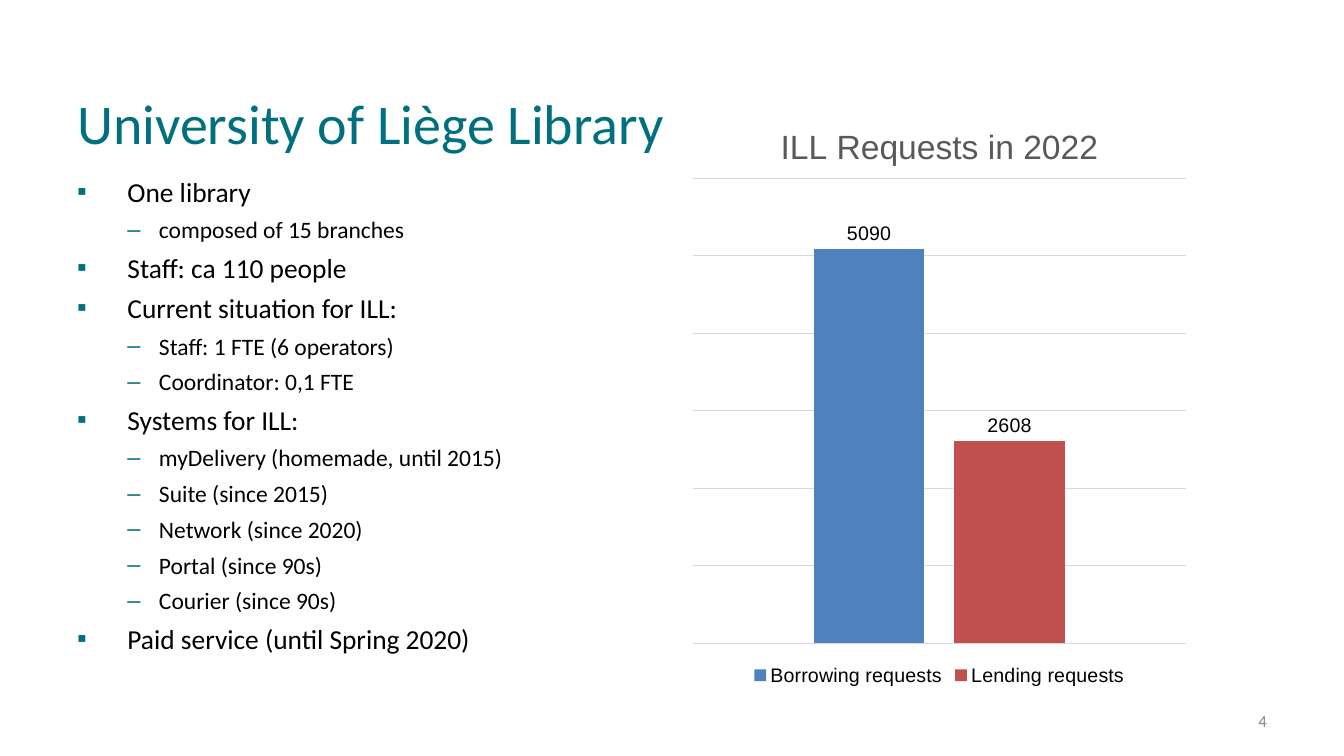
from lxml import etree
from pptx import Presentation
from pptx.chart.data import CategoryChartData
from pptx.dml.color import RGBColor
from pptx.enum.chart import XL_CHART_TYPE, XL_LABEL_POSITION, XL_LEGEND_POSITION
from pptx.enum.text import MSO_ANCHOR, PP_ALIGN
from pptx.oxml.ns import qn
from pptx.util import Pt

COLUMNS = XL_CHART_TYPE.COLUMN_CLUSTERED
OUTSIDE_END = XL_LABEL_POSITION.OUTSIDE_END
BOTTOM = XL_LEGEND_POSITION.BOTTOM
MIDDLE = MSO_ANCHOR.MIDDLE
LEFT, RIGHT = PP_ALIGN.LEFT, PP_ALIGN.RIGHT

TEAL = "00707F"
BLACK = "000000"
TITLE_ONLY = 5

# Per level: bullet, left margin, hanging indent, space before, text size
LEVELS = [("▪", 36, 36, 9.9, 19.6), ("–", 58.5, 22.5, 9.4, 16.8)]
POINTS = [
    (0, "One library"),
    (1, "composed of 15 branches"),
    (0, "Staff: ca 110 people"),
    (0, "Current situation for ILL:"),
    (1, "Staff: 1 FTE (6 operators)"),
    (1, "Coordinator: 0,1 FTE"),
    (0, "Systems for ILL:"),
    (1, "myDelivery (homemade, until 2015)"),
    (1, "Suite (since 2015)"),
    (1, "Network (since 2020)"),
    (1, "Portal (since 90s)"),
    (1, "Courier (since 90s)"),
    (0, "Paid service (until Spring 2020)"),
]
REQUESTS = [("Borrowing requests", 5090, "4F81BD"), ("Lending requests", 2608, "C0504D")]
# Inner plot area as fractions of the chart
PLOT_LAYOUT = {"x": 0.02, "y": 0.13, "w": 0.96, "h": 0.79}


def rgb(color):
    return RGBColor.from_string(color)


def set_font(font, name, size, color):
    font.name = name
    font.size = Pt(size)
    font.color.rgb = rgb(color)


deck = Presentation()
deck.slide_width, deck.slide_height = Pt(960), Pt(540)
page = deck.slides.add_slide(deck.slide_layouts[TITLE_ONLY])

# Title
title = page.shapes.title
title.left, title.top, title.width, title.height = Pt(48), Pt(62.6), Pt(864), Pt(49)
title.text_frame.text = "University of Liège Library"
title.text_frame.vertical_anchor = MIDDLE
title_para = title.text_frame.paragraphs[0]
title_para.alignment = LEFT
set_font(title_para.font, "Calibri", 40, TEAL)

# Bulleted text
body = page.shapes.add_textbox(Pt(48), Pt(126), Pt(864), Pt(368)).text_frame
body.word_wrap = True
for index, (level, text) in enumerate(POINTS):
    bullet, margin, hanging, space, size = LEVELS[level]
    para = body.add_paragraph() if index else body.paragraphs[0]
    para.text = text
    para.level = level
    para.line_spacing = 0.8
    para.space_before = Pt(space if index else 0)
    properties = para._p.get_or_add_pPr()
    properties.set("marL", str(Pt(margin)))
    properties.set("indent", str(-Pt(hanging)))
    bullet_color = etree.SubElement(properties, qn("a:buClr"))
    etree.SubElement(bullet_color, qn("a:srgbClr"), val=TEAL)
    etree.SubElement(properties, qn("a:buFont"), typeface="Arial")
    etree.SubElement(properties, qn("a:buChar"), char=bullet)
    set_font(para.font, "Calibri", size, BLACK)

# Page number
number = page.shapes.add_textbox(Pt(688), Pt(500.5), Pt(224), Pt(28.8)).text_frame
number.word_wrap = True
number.vertical_anchor = MIDDLE
number.text = "4"
number_para = number.paragraphs[0]
number_para.alignment = RIGHT
set_font(number_para.font, "Calibri", 12, "888888")

# Chart of requests
data = CategoryChartData()
data.categories = ["1"]
for name, count, color in REQUESTS:
    data.add_series(name, [count])
chart = page.shapes.add_chart(COLUMNS, Pt(487.5), Pt(72.7), Pt(367), Pt(420.5), data).chart
set_font(chart.font, "Arial", 10, BLACK)

chart.has_title = True
chart.chart_title.include_in_layout = False
chart.chart_title.text_frame.text = "ILL Requests in 2022"
chart_title_font = chart.chart_title.text_frame.paragraphs[0].font
set_font(chart_title_font, "Arial", 24, "595959")
chart_title_font.bold = False

chart.has_legend = True
chart.legend.position = BOTTOM
chart.legend.include_in_layout = False
set_font(chart.legend.font, "Arial", 14, BLACK)

chart.category_axis.visible = False
value_axis = chart.value_axis
value_axis.visible = False
value_axis.minimum_scale, value_axis.maximum_scale = 0, 6000
value_axis.major_unit = 1000
value_axis.has_major_gridlines = True
grid_line = value_axis.major_gridlines.format.line
grid_line.color.rgb = rgb("D9D9D9")
grid_line.width = Pt(0.75)

plot = chart.plots[0]
plot.gap_width, plot.overlap = 219, -27
plot.vary_by_categories = False
for series, (name, count, color) in zip(plot.series, REQUESTS):
    series.format.fill.solid()
    series.format.fill.fore_color.rgb = rgb(color)
    labels = series.data_labels
    labels.show_value = True
    labels.position = OUTSIDE_END
    set_font(labels.font, "Arial", 14, BLACK)

plot_area = chart.element.find(".//" + qn("c:plotArea"))
for layout in plot_area.findall(qn("c:layout")):
    plot_area.remove(layout)
layout = etree.Element(qn("c:layout"))
plot_area.insert(0, layout)
manual = etree.SubElement(layout, qn("c:manualLayout"))
etree.SubElement(manual, qn("c:layoutTarget"), val="inner")
for side in "xy":
    etree.SubElement(manual, qn(f"c:{side}Mode"), val="edge")
for side, fraction in PLOT_LAYOUT.items():
    etree.SubElement(manual, qn(f"c:{side}"), val=str(fraction))

deck.save("out.pptx")
